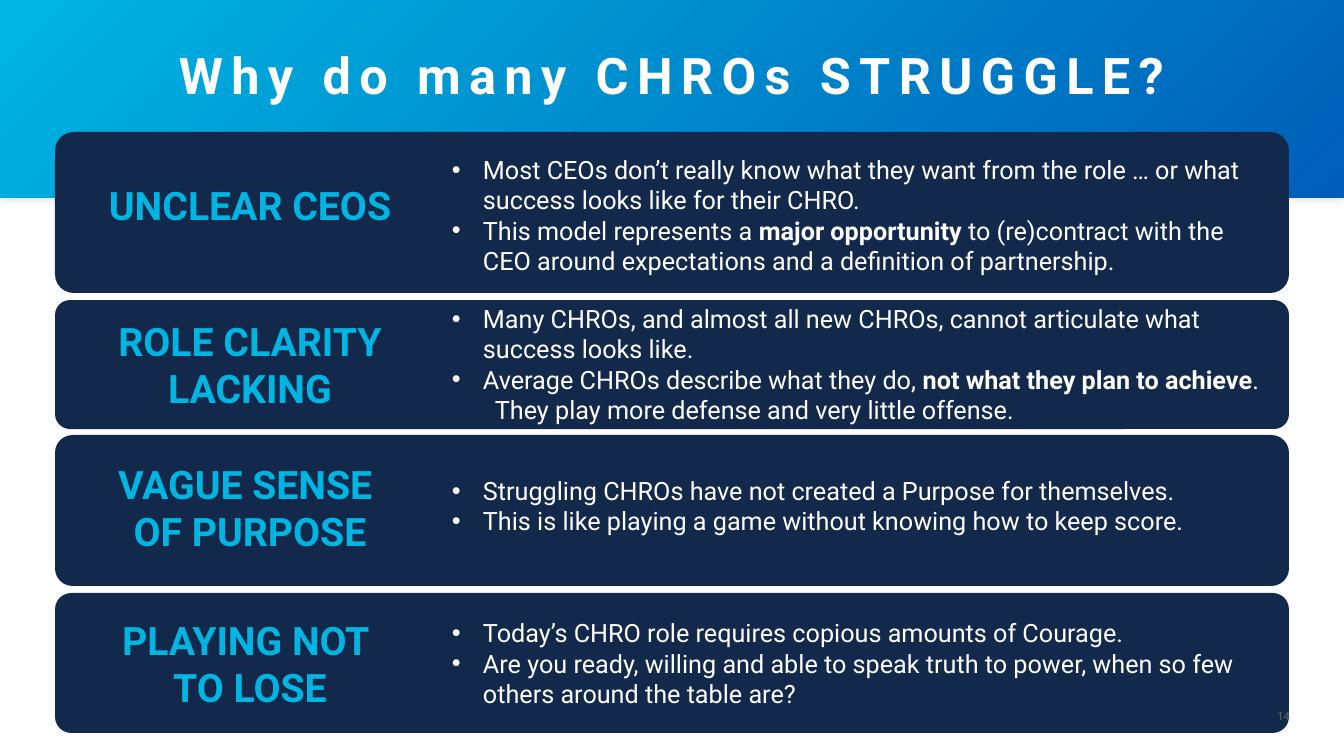
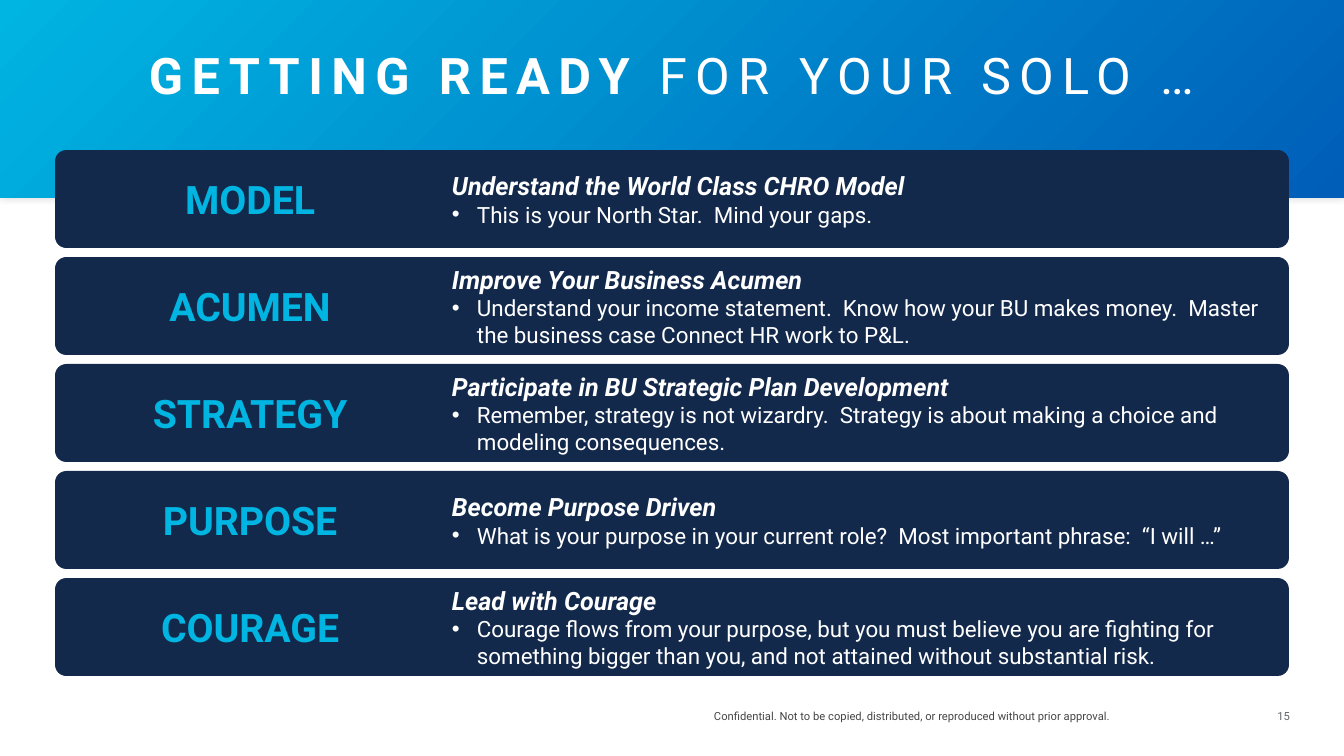
from lxml.etree import SubElement
from pptx import Presentation
from pptx.dml.color import RGBColor
from pptx.enum.shapes import MSO_SHAPE as SHAPE
from pptx.enum.text import MSO_ANCHOR as ANCHOR, MSO_AUTO_SIZE as AUTO, PP_ALIGN as ALIGN
from pptx.oxml.ns import qn
from pptx.util import Emu, Pt

# Shared style
FONT = "Roboto"
WHITE, NAVY, CYAN, BLUE = "FFFFFF", "13294B", "00B5E2", "005EB8"
FOOTER_GREY, NUMBER_GREY = "454545", "63666A"
SLIDE_WIDTH, SLIDE_HEIGHT, BAND_HEIGHT = 1344, 756, 198
CARD_LEFT, CARD_WIDTH = 55, 1234
LABEL_LEFT, LABEL_WIDTH = 76, 348
DETAIL_LEFT, DETAIL_WIDTH = 452, 809
FOOTER_TOP, FOOTER_HEIGHT = 709, 20

# Slide 1 cards: label, (top, height) of card, label and detail, then bullets of (text, bold) runs
STRUGGLES = [
    ("UNCLEAR CEOS", (132, 161), (172, 66), (154, 122), [
        [("Most CEOs don’t really know what they want from the role … "
          "or what success looks like for their CHRO.", False)],
        [("This model represents a ", False), ("major opportunity ", True),
         ("to (re)contract with the CEO around expectations and a definition of partnership.", False)],
    ]),
    ("ROLE CLARITY LACKING", (300, 129), (295, 139), (303, 122), [
        [("Many CHROs, and almost all new CHROs, cannot articulate what success looks like.", False)],
        [("Average CHROs describe what they do, ", False), ("not what they plan to achieve", True),
         (".   They play more defense and very little offense.", False)],
    ]),
    ("VAGUE SENSE \nOF PURPOSE", (435, 151), (452, 111), (475, 61), [
        [("Struggling CHROs have not created a Purpose for themselves.", False)],
        [("This is like playing a game without knowing how to keep score.", False)],
    ]),
    ("PLAYING NOT \nTO LOSE", (593, 140), (588, 151), (597, 132), [
        [("Today’s CHRO role requires copious amounts of Courage.", False)],
        [("Are you ready, willing and able to speak truth to power, "
          "when so few others around the table are?", False)],
    ]),
]

# Slide 2 cards: label, detail height, heading, bullet
STEPS = [
    ("MODEL", 57, "Understand the World Class CHRO Model",
     "This is your North Star.  Mind your gaps."),
    ("ACUMEN", 85, "Improve Your Business Acumen",
     "Understand your income statement.  Know how your BU makes money.  "
     "Master the business case Connect HR work to P&L."),
    ("STRATEGY", 85, "Participate in BU Strategic Plan Development",
     "Remember, strategy is not wizardry.  Strategy is about making a choice "
     "and modeling consequences."),
    ("PURPOSE", 57, "Become Purpose Driven",
     "What is your purpose in your current role?  Most important phrase:  “I will …”"),
    ("COURAGE", 85, "Lead with Courage",
     "Courage flows from your purpose, but you must believe you are fighting for "
     "something bigger than you, and not attained without substantial risk."),
]
STEP_TOP, STEP_PITCH, STEP_HEIGHT, STEP_LABEL_HEIGHT = 150, 107, 98, 57


def px(length):
    return Emu(round(length * 914400 / 100.8))


def rgb(color):
    return RGBColor.from_string(color)


def write(paragraph, text, size=18, color=WHITE, bold=False, italic=False, spacing=0):
    """Add text to a paragraph; a newline becomes a line break."""
    for index, line in enumerate(text.split("\n")):
        if index:
            paragraph.add_line_break()
        run = paragraph.add_run()
        run.text = line
        font = run.font
        font.name, font.size, font.bold, font.italic = FONT, Pt(size), bold, italic
        font.color.rgb = rgb(color)
        if spacing:
            run._r.get_or_add_rPr().set("spc", str(spacing * 100))


def clear_insets(frame):
    frame.margin_left = frame.margin_right = frame.margin_top = frame.margin_bottom = 0


def add_frame(shapes, left, top, width, height, inset=False, anchor=ANCHOR.TOP, grow=False):
    frame = shapes.add_textbox(px(left), px(top), px(width), px(height)).text_frame
    frame.word_wrap = True
    frame.vertical_anchor = anchor
    if grow:
        frame.auto_size = AUTO.SHAPE_TO_FIT_TEXT
    if not inset:
        clear_insets(frame)
    return frame


def next_paragraph(frame):
    return frame.add_paragraph() if frame.text else frame.paragraphs[0]


def add_bullet(frame, indent):
    paragraph = next_paragraph(frame)
    properties = paragraph._p.get_or_add_pPr()
    properties.set("marL", str(px(indent)))
    properties.set("indent", str(-px(indent)))
    SubElement(properties, qn("a:buFont"), typeface="Arial")
    SubElement(properties, qn("a:buChar"), char="•")
    return paragraph


def add_band(slide):
    """Add the gradient header band behind the title."""
    band = slide.shapes.add_shape(SHAPE.RECTANGLE, 0, 0, px(SLIDE_WIDTH), px(BAND_HEIGHT))
    band.line.fill.background()
    band.fill.gradient()
    for stop, color, position in zip(band.fill.gradient_stops, (CYAN, BLUE), (0, 1)):
        stop.color.rgb = rgb(color)
        stop.position = position

    # Radial gradient that starts in the top left corner
    properties = band.element.spPr
    gradient = properties.find(qn("a:gradFill"))
    gradient.remove(gradient.find(qn("a:lin")))
    radial = SubElement(gradient, qn("a:path"), path="circle")
    SubElement(radial, qn("a:fillToRect"), r="100000", b="100000")

    # Soft shadow
    band.shadow.inherit = False
    shadow = SubElement(properties.find(qn("a:effectLst")), qn("a:outerShdw"),
                        blurRad=str(Pt(5)), dist="0", dir="0", algn="ctr", rotWithShape="0")
    black = SubElement(shadow, qn("a:srgbClr"), val="000000")
    SubElement(black, qn("a:alpha"), val="15000")
    slide.shapes.title.element.addprevious(band.element)


def add_titled_slide(deck, title_runs):
    slide = deck.slides.add_slide(deck.slide_layouts[5])
    add_band(slide)
    title = slide.shapes.title
    title.left, title.top, title.width, title.height = px(55), px(51), px(1234), px(61)
    frame = title.text_frame
    frame.auto_size = AUTO.NONE
    frame.word_wrap = True
    frame.vertical_anchor = ANCHOR.TOP
    clear_insets(frame)
    paragraph = frame.paragraphs[0]
    paragraph.alignment = ALIGN.CENTER
    paragraph.line_spacing = 0.9
    for text, bold in title_runs:
        write(paragraph, text, size=36, bold=bold, spacing=6)
    return slide


def add_card(slide, label, card_span, label_span, detail_span):
    """Add a card with its label; return the empty detail frame."""
    shapes = slide.shapes.add_group_shape().shapes
    top, height = card_span
    panel = shapes.add_shape(SHAPE.ROUNDED_RECTANGLE, px(CARD_LEFT), px(top),
                             px(CARD_WIDTH), px(height))
    panel.adjustments[0] = 0.116
    panel.fill.solid()
    panel.fill.fore_color.rgb = rgb(NAVY)
    panel.line.fill.background()
    panel.shadow.inherit = False

    top, height = label_span
    label_frame = add_frame(shapes, LABEL_LEFT, top, LABEL_WIDTH, height,
                            inset=True, anchor=ANCHOR.MIDDLE, grow=True)
    paragraph = label_frame.paragraphs[0]
    paragraph.alignment = ALIGN.CENTER
    write(paragraph, label, size=28, color=CYAN, bold=True)

    top, height = detail_span
    return add_frame(shapes, DETAIL_LEFT, top, DETAIL_WIDTH, height,
                     anchor=ANCHOR.MIDDLE, grow=True)


def add_page_number(slide, number):
    frame = add_frame(slide.shapes, 1254, FOOTER_TOP, 36, FOOTER_HEIGHT)
    frame.paragraphs[0].alignment = ALIGN.RIGHT
    write(frame.paragraphs[0], str(number), size=8, color=NUMBER_GREY)


def add_confidential_note(slide):
    frame = add_frame(slide.shapes, 714, FOOTER_TOP, 501, FOOTER_HEIGHT)
    write(frame.paragraphs[0],
          "Confidential. Not to be copied, distributed, or reproduced without prior approval.",
          size=8, color=FOOTER_GREY)


def build_struggle_slide(deck):
    slide = add_titled_slide(deck, [("Why do many CHROs STRUGGLE?", True)])
    for label, card_span, label_span, detail_span, bullets in STRUGGLES:
        detail = add_card(slide, label, card_span, label_span, detail_span)
        for runs in bullets:
            bullet = add_bullet(detail, indent=31)
            for text, bold in runs:
                write(bullet, text, bold=bold)
    add_page_number(slide, 14)


def build_solo_slide(deck):
    slide = add_titled_slide(deck, [("GETTING READY ", True), ("FOR YOUR SOLO …", False)])
    for index, (label, detail_height, heading, note) in enumerate(STEPS):
        top = STEP_TOP + index * STEP_PITCH
        middle = top + STEP_HEIGHT / 2
        label_span, detail_span = [(middle - height / 2, height)
                                   for height in (STEP_LABEL_HEIGHT, detail_height)]
        detail = add_card(slide, label, (top, STEP_HEIGHT), label_span, detail_span)
        write(next_paragraph(detail), heading, bold=True, italic=True)
        write(add_bullet(detail, indent=25), note, size=16)
    add_confidential_note(slide)
    add_page_number(slide, 15)


def main():
    deck = Presentation()
    deck.slide_width, deck.slide_height = px(SLIDE_WIDTH), px(SLIDE_HEIGHT)
    build_struggle_slide(deck)
    build_solo_slide(deck)
    deck.save("out.pptx")


if __name__ == "__main__":
    main()
